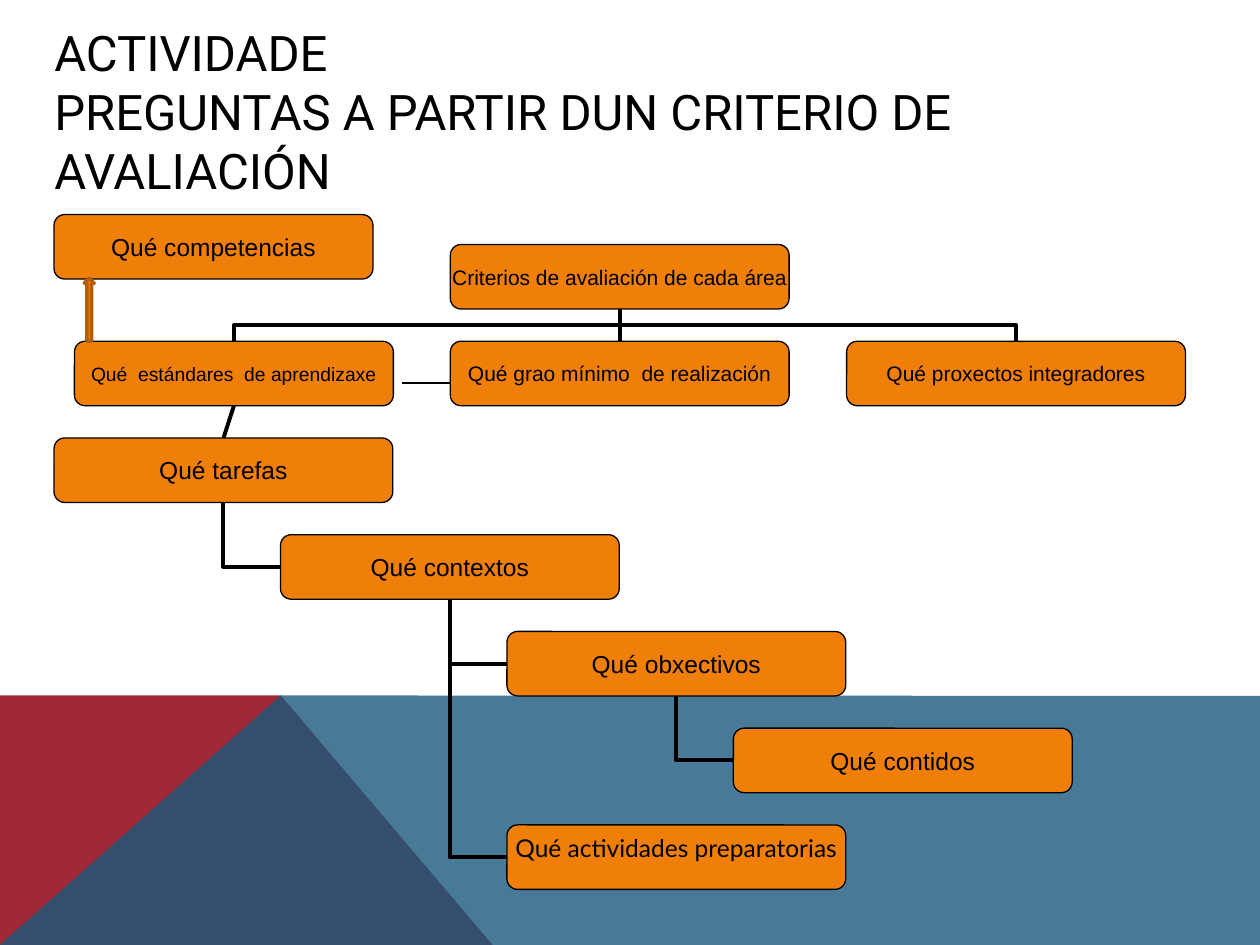
from dataclasses import dataclass

from lxml.etree import SubElement
from pptx import Presentation
from pptx.dml.color import RGBColor
from pptx.enum.shapes import MSO_CONNECTOR, MSO_SHAPE
from pptx.enum.text import MSO_ANCHOR, MSO_AUTO_SIZE, PP_ALIGN
from pptx.oxml.ns import qn
from pptx.util import Cm, Pt


@dataclass(frozen=True)
class Theme:
    ink: RGBColor = RGBColor.from_string("000000")
    box: RGBColor = RGBColor.from_string("F07F09")
    arrow_edge: RGBColor = RGBColor.from_string("B25E07")
    red: RGBColor = RGBColor.from_string("9F2936")
    blue: RGBColor = RGBColor.from_string("1B587C")
    title_size: Pt = Pt(28)
    large: Pt = Pt(14)
    medium: Pt = Pt(12)
    small: Pt = Pt(11)
    thin: Pt = Pt(0.75)
    edge: Pt = Pt(2)
    thick: Pt = Pt(2.25)


theme = Theme()


def paint(shape, fill, line_color=None, line_width=None):
    shape.shadow.inherit = False
    shape.fill.solid()
    shape.fill.fore_color.rgb = fill
    if line_color is None:
        shape.line.fill.background()
    else:
        shape.line.color.rgb = line_color
        shape.line.width = line_width


def draw_connector(kind, start, end, width):
    connector = slide.shapes.add_connector(kind, *start, *end)
    connector.line.color.rgb = theme.ink
    connector.line.width = width
    SubElement(connector._element.spPr, qn("a:effectLst"))
    return connector


presentation = Presentation()
presentation.slide_width = Cm(25.4)
presentation.slide_height = Cm(19.05)
slide = presentation.slides.add_slide(presentation.slide_layouts[5])

bands = [
    (theme.red, [(0, 19.05), (0, 14.02), (5.66, 14.02), (9.93, 19.05)]),
    (theme.blue, [(0, 19.05), (5.66, 14.02), (25.4, 14.03), (25.4, 19.05)]),
]
for color, corners in bands:
    points = [(Cm(x), Cm(y)) for x, y in corners]
    builder = slide.shapes.build_freeform(*points[0])
    builder.add_line_segments(points[1:], close=True)
    band = builder.convert_to_shape()
    paint(band, color)
SubElement(band._element.spPr.find(qn("a:solidFill"))[0], qn("a:alpha"), val="80000")

title = slide.shapes.title
title.left, title.top, title.width, title.height = Cm(0.84), Cm(0.64), Cm(23.72), Cm(3.18)
title.text_frame.auto_size = MSO_AUTO_SIZE.NONE
title.text_frame.word_wrap = True
title.text_frame.vertical_anchor = MSO_ANCHOR.MIDDLE
paragraph = title.text_frame.paragraphs[0]
paragraph.alignment = PP_ALIGN.LEFT
for index, text in enumerate(["ACTIVIDADE", "PREGUNTAS A PARTIR DUN CRITERIO DE AVALIACIÓN"]):
    if index:
        paragraph.add_line_break()
    run = paragraph.add_run()
    run.text = text
    run.font.name = "Roboto"
    run.font.size = theme.title_size
    run.font.color.rgb = theme.ink

origin_left, origin_top = 1.09, 4.93
column_step, row_step = 4.565, 1.95
wide, narrow, box_height = 6.83, 6.43, 1.3

box_rows = [
    ("criterios", "Criterios de avaliación de cada área", 1.75, 0, wide, theme.medium, "Arial"),
    ("estándares", "Qué  estándares  de aprendizaxe", 0.09, 1, narrow, theme.small, "Arial"),
    ("grao", "Qué grao mínimo  de realización", 1.75, 1, wide, theme.medium, "Arial"),
    ("proxectos", "Qué proxectos integradores", 3.5, 1, wide, theme.medium, "Arial"),
    ("tarefas", "Qué tarefas", 0, 2, wide, theme.large, "Arial"),
    ("contextos", "Qué contextos", 1, 3, wide, theme.large, "Arial"),
    ("obxectivos", "Qué obxectivos", 2, 4, wide, theme.large, "Arial"),
    ("contidos", "Qué contidos", 3, 5, wide, theme.large, "Arial"),
    ("actividades", "Qué actividades preparatorias", 2, 6, wide, theme.large, "Lato"),
    ("competencias", "Qué competencias", 0, -0.31, narrow, theme.large, "Arial"),
]
boxes = {}
for key, text, column, row, width, size, font_name in box_rows:
    shape = slide.shapes.add_shape(
        MSO_SHAPE.ROUNDED_RECTANGLE,
        Cm(origin_left + column * column_step),
        Cm(origin_top + row * row_step),
        Cm(width),
        Cm(box_height),
    )
    paint(shape, theme.box, theme.ink, theme.thin)
    frame = shape.text_frame
    frame.margin_left = frame.margin_right = frame.margin_top = frame.margin_bottom = 0
    frame.word_wrap = False
    frame.vertical_anchor = MSO_ANCHOR.MIDDLE
    paragraph = frame.paragraphs[0]
    paragraph.alignment = PP_ALIGN.CENTER
    run = paragraph.add_run()
    run.text = text
    run.font.name = font_name
    run.font.size = size
    run.font.color.rgb = theme.ink
    boxes[key] = shape
boxes["actividades"].text_frame.margin_bottom = Cm(0.38)

for child_key, parent_key in [("grao", "criterios"), ("tarefas", "estándares")]:
    connector = draw_connector(MSO_CONNECTOR.STRAIGHT, (0, 0), (0, 0), theme.thick)
    connector.begin_connect(boxes[child_key], 0)
    connector.end_connect(boxes[parent_key], 2)

side_links = [
    ("contextos", "tarefas"),
    ("obxectivos", "contextos"),
    ("actividades", "contextos"),
    ("contidos", "obxectivos"),
]
for child_key, parent_key in side_links:
    child, parent = boxes[child_key], boxes[parent_key]
    start = (child.left, child.top + child.height // 2)
    end = (parent.left + parent.width // 2, parent.top + parent.height)
    connector = draw_connector(MSO_CONNECTOR.ELBOW, start, end, theme.thick)
    connector._element.spPr.find(qn("a:prstGeom")).set("prst", "bentConnector2")
    connector.begin_connect(child, 1)
    connector.end_connect(parent, 2)

for child_key, flips in [("proxectos", ["flipH"]), ("estándares", ["flipH", "flipV"])]:
    child, parent = boxes[child_key], boxes["criterios"]
    start = (child.left + child.width // 2, child.top)
    end = (parent.left + parent.width // 2, parent.top + parent.height)
    connector = draw_connector(MSO_CONNECTOR.ELBOW, start, end, theme.thick)
    connector.begin_connect(child, 0)
    connector.end_connect(parent, 2)
    across, down = abs(end[0] - start[0]), abs(end[1] - start[1])
    connector.left = (start[0] + end[0] - down) // 2
    connector.top = (start[1] + end[1] - across) // 2
    connector.width, connector.height = down, across
    transform = connector._element.spPr.find(qn("a:xfrm"))
    for name in ["flipH", "flipV"]:
        transform.set(name, "1" if name in flips else "0")
    transform.set("rot", "5400000")

draw_connector(MSO_CONNECTOR.STRAIGHT, (Cm(8.1), Cm(7.72)), (Cm(9.09), Cm(7.72)), theme.thin)

arrow = slide.shapes.add_shape(MSO_SHAPE.UP_ARROW, Cm(1.7), Cm(5.61), Cm(0.2), Cm(1.27))
paint(arrow, theme.box, theme.arrow_edge, theme.edge)

presentation.save("out.pptx")
